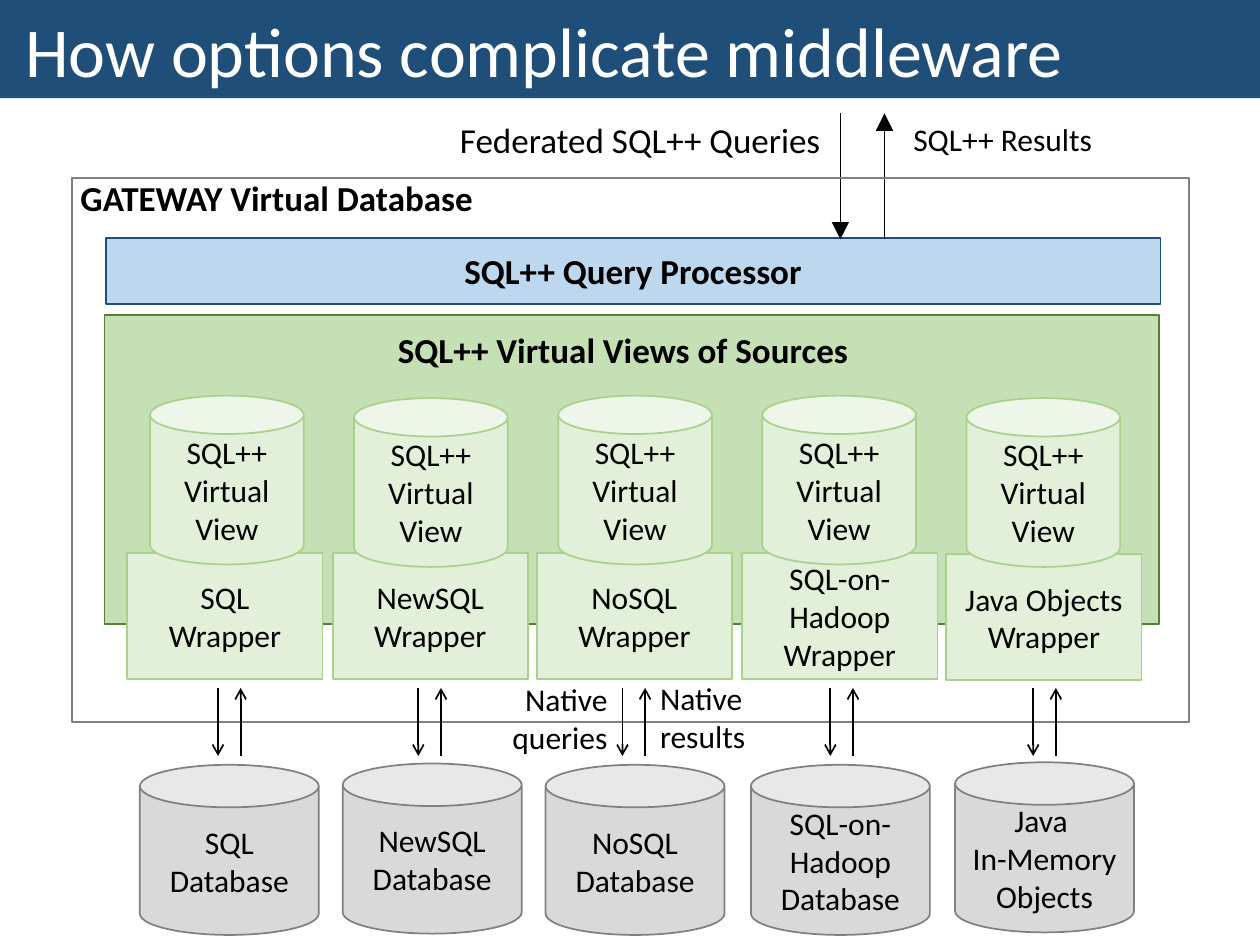
import pptx
import pptx.util
import pptx.dml.color
import pptx.enum.shapes
import pptx.enum.text
import pptx.oxml.ns
import lxml.etree

Inches = pptx.util.Inches
Pt = pptx.util.Pt
color = pptx.dml.color.RGBColor.from_string
SHAPE = pptx.enum.shapes.MSO_SHAPE
ALIGN = pptx.enum.text.PP_ALIGN
ANCHOR = pptx.enum.text.MSO_ANCHOR

presentation = pptx.Presentation()
presentation.slide_width = Inches(10)
presentation.slide_height = Inches(7.5)
slide = presentation.slides.add_slide(presentation.slide_layouts[6])


def add_box(kind, left, top, width, height, text="", fill=None, line=None,
            size=18, bold=False, align=ALIGN.CENTER, font_color="000000", wrap=True):
    place = [Inches(value) for value in (left, top, width, height)]
    if kind is None:
        shape = slide.shapes.add_textbox(*place)
        shape.text_frame.auto_size = pptx.enum.text.MSO_AUTO_SIZE.SHAPE_TO_FIT_TEXT
    else:
        shape = slide.shapes.add_shape(kind, *place)
        shape.shadow.inherit = False
        shape.text_frame.vertical_anchor = ANCHOR.MIDDLE
        if fill:
            shape.fill.solid()
            shape.fill.fore_color.rgb = color(fill)
        else:
            shape.fill.background()
        if line:
            shape.line.color.rgb = color(line)
            shape.line.width = Pt(1)
        else:
            shape.line.fill.background()
    frame = shape.text_frame
    frame.word_wrap = wrap
    for index, words in enumerate(text.split("\n") if text else []):
        paragraph = frame.add_paragraph() if index else frame.paragraphs[0]
        paragraph.alignment = align
        run = paragraph.add_run()
        run.text = words
        run.font.name = "Calibri"
        run.font.size = Pt(size)
        run.font.bold = bold
        run.font.color.rgb = color(font_color)
    return shape


def add_arrow(x, top, bottom, end, head, head_size="med"):
    connector = slide.shapes.add_connector(
        pptx.enum.shapes.MSO_CONNECTOR.STRAIGHT, Inches(x), Inches(top), Inches(x), Inches(bottom))
    connector.line.color.rgb = color("000000")
    connector.line.width = Pt(1)
    line = connector.line._get_or_add_ln()
    lxml.etree.SubElement(line, pptx.oxml.ns.qn("a:" + end), type=head, w=head_size, len=head_size)
    lxml.etree.SubElement(connector._element.spPr, pptx.oxml.ns.qn("a:effectLst"))


add_box(SHAPE.RECTANGLE, 0.83, 2.5, 8.37, 2.45, fill="C5E0B4", line="548235")
add_box(SHAPE.RECTANGLE, 0.84, 1.89, 8.37, 0.52, "SQL++ Query Processor",
        "BDD7EE", "1F4E79", size=20, bold=True)

databases = [
    (1.11, 6.07, "SQL\nDatabase"),
    (2.72, 6.06, "NewSQL\nDatabase"),
    (4.33, 6.07, "NoSQL\nDatabase"),
    (5.96, 6.07, "SQL-on-Hadoop\nDatabase"),
    (7.58, 6.05, "Java \nIn-Memory Objects"),
]
for left, top, text in databases:
    add_box(SHAPE.CAN, left, top, 1.42, 1.35, text, "D9D9D9", "808080")

add_box(None, 3.06, 2.56, 3.81, 0.44, "SQL++ Virtual Views of Sources",
        size=20, bold=True, align=ALIGN.LEFT, wrap=False)
add_box(None, 2.59, 0.89, 4.02, 0.44, "Federated SQL++ Queries", size=20, align=ALIGN.RIGHT)
add_box(None, 7.15, 0.9, 1.62, 0.4, "SQL++ Results", align=ALIGN.LEFT, wrap=False)
add_arrow(6.67, 0.9, 1.9, "tailEnd", "triangle", "lg")
add_arrow(7.02, 0.9, 1.9, "headEnd", "triangle", "lg")

add_box(SHAPE.RECTANGLE, 0.57, 1.41, 8.87, 4.32, line="808080")
add_box(None, 0.54, 1.35, 3.45, 0.44, "GATEWAY Virtual Database",
        size=20, bold=True, align=ALIGN.LEFT, wrap=False)
title = add_box(SHAPE.RECTANGLE, 0, 0, 10, 0.78, "How options complicate middleware",
                "1F4E79", size=40, align=ALIGN.LEFT, font_color="FFFFFF")
title.text_frame.margin_left = title.text_frame.margin_right = Inches(0.2)
title.text_frame.margin_top = title.text_frame.margin_bottom = Inches(0.1)

wrappers = [
    (1.01, 4.39, "SQL\nWrapper"),
    (2.64, 4.39, "NewSQL\nWrapper"),
    (4.26, 4.39, "NoSQL\nWrapper"),
    (5.89, 4.39, "SQL-on-Hadoop\nWrapper"),
    (7.51, 4.4, "Java Objects Wrapper"),
]
for left, top, text in wrappers:
    add_box(SHAPE.RECTANGLE, left, top, 1.55, 1, text, "E2F0D9", "A9D18E")

for column, top in enumerate([3.14, 3.16, 3.14, 3.14, 3.16]):
    add_box(SHAPE.CAN, 1.19 + 1.62 * column, top, 1.22, 1.34,
            "SQL++\nVirtual\nView", "E2F0D9", "A9D18E")

add_box(None, 3.92, 5.35, 1, 0.71, "Native\nqueries", align=ALIGN.RIGHT, wrap=False)
add_box(None, 5.14, 5.34, 0.88, 0.71, "Native\nresults", align=ALIGN.LEFT, wrap=False)
for x in [1.73, 3.32, 4.94, 6.59, 8.2]:
    add_arrow(x, 5.46, 6, "tailEnd", "arrow")
    add_arrow(x + 0.18, 5.46, 6, "headEnd", "arrow")

presentation.save("out.pptx")
